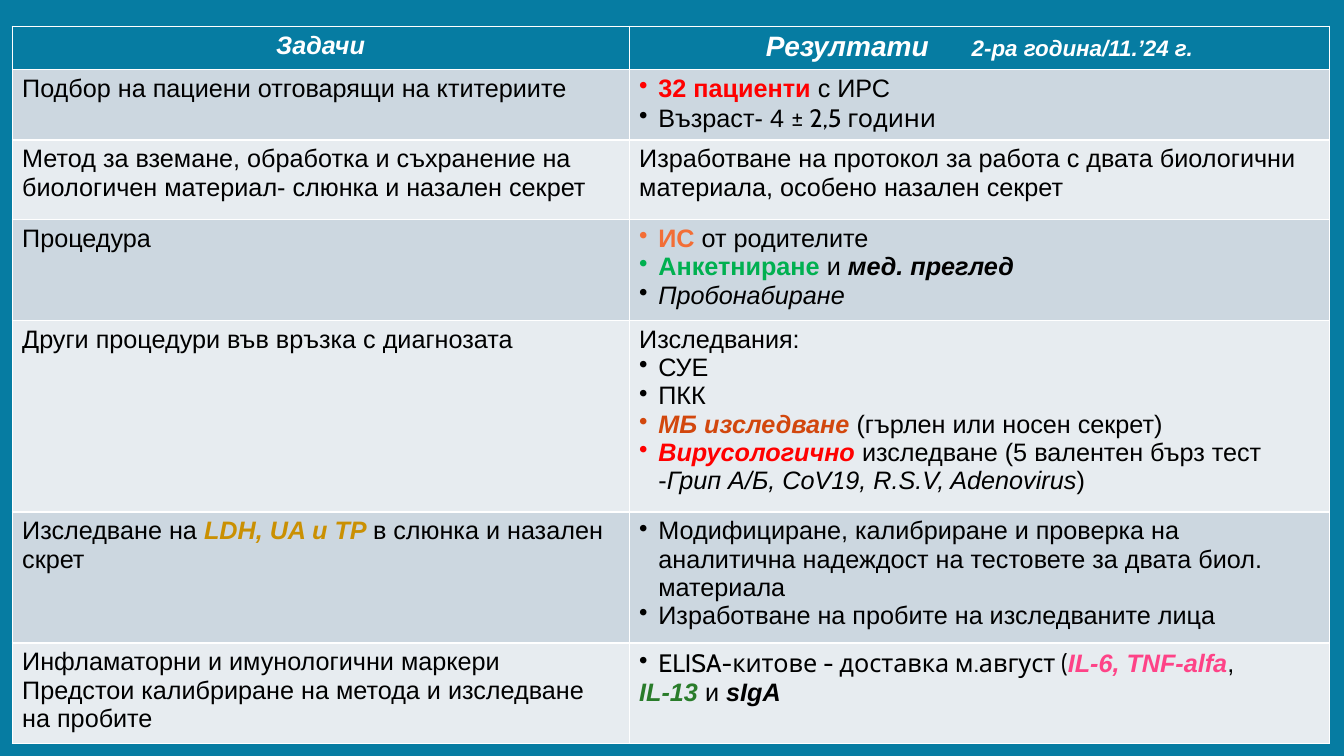
from pptx import Presentation
from pptx.dml.color import RGBColor
from pptx.enum.text import PP_ALIGN
from pptx.oxml.xmlchemy import OxmlElement
from pptx.util import Inches, Pt

CENTER = PP_ALIGN.CENTER
WIDTH, HEIGHT = Inches(13.33), Inches(7.5)
BLANK_LAYOUT = 6
TEAL, WHITE, BLACK, RED = "067CA2", "FFFFFF", "000000", "FF0000"
BANDS = ("E7ECF0", "CCD7E0")
INDENT = Inches(0.19)
COLUMNS = (6.12, 6.95)
ROWS = (0.43, 0.7, 0.79, 1.0, 1.9, 1.3, 1.0)


def color(code):
    return RGBColor.from_string(code)


def span(text, code=None, bold=None, italic=None, face=None):
    return text, code, bold, italic, face


def strong(text, code=None):
    return span(text, code, bold=True)


def accent(text, code=None):
    return span(text, code, bold=True, italic=True)


def slanted(text):
    return span(text, italic=True)


def cabin(text):
    return span(text, face="Cabin")


def plain(*spans):
    return "plain", spans


def bullet(*spans):
    return "bullet", spans


def hanging(*spans):
    return "hanging", spans


TASKS = (
    (
        [plain("Подбор на пациени отговарящи на ктитериите")],
        [bullet(strong("32 пациенти ", RED), "с ИРС"),
         bullet("Възраст- 4 ", cabin("± 2,5 години"))],
    ),
    (
        [plain("Метод за вземане, обработка и съхранение на "
               "биологичен материал- слюнка и назален секрет")],
        [plain("Изработване на протокол за работа с двата биологични "
               "материала, особено назален секрет")],
    ),
    (
        [plain("Процедура")],
        [bullet(strong("ИС ", "F36E36"), "от родителите"),
         bullet(strong("Анкетниране", "00B050"), " и ", accent("мед. преглед")),
         bullet(slanted("Пробонабиране"))],
    ),
    (
        [plain("Други процедури във връзка с диагнозата")],
        [plain("Изследвания:"),
         bullet("СУЕ"),
         bullet("ПКК"),
         bullet(accent("МБ изследване ", "D2470D"), "(гърлен или носен секрет)"),
         bullet(accent("Вирусологично ", RED), "изследване (5 валентен бърз тест -",
                slanted("Грип А/Б, CoV19, R.S.V, Adenovirus"), ")")],
    ),
    (
        [plain("Изследване на ", accent("LDH, UA и TP ", "CA9002"),
               "в слюнка и назален скрет")],
        [bullet("Модифициране, калибриране и проверка на аналитична "
                "надеждост на тестовете за двата биол. материала"),
         bullet("Изработване на пробите на изследваните лица")],
    ),
    (
        [plain("Инфламаторни и имунологични маркери"),
         plain("Предстои калибриране на метода и изследване на пробите")],
        [bullet(cabin("ELISA-китове - доставка м.август ("),
                accent("IL-6, TNF-alfa", "FE4387"), ","),
         hanging(accent("IL-13 ", "297C2A"), "и ", accent("sIgA"))],
    ),
)


def fill_cell(cell, code):
    cell.fill.solid()
    cell.fill.fore_color.rgb = color(code)


def set_font(para, code, emphasis):
    font = para.font
    font.name, font.size = "Arial", Pt(18)
    font.bold = font.italic = emphasis
    font.color.rgb = color(code)


def set_indent(para, kind):
    properties = para._p.get_or_add_pPr()
    properties.set("marL", str(INDENT))
    properties.set("indent", str(-INDENT))
    if kind == "bullet":
        mark = OxmlElement("a:buChar")
        mark.set("char", "•")
        properties.append(mark)


def add_span(para, text, code, bold, italic, face):
    run = para.add_run()
    run.text = text
    run.font.bold, run.font.italic, run.font.name = bold, italic, face
    if code:
        run.font.color.rgb = color(code)


def write_cell(cell, paragraphs):
    frame = cell.text_frame
    for index, (kind, spans) in enumerate(paragraphs):
        para = frame.add_paragraph() if index else frame.paragraphs[0]
        if kind != "plain":
            set_indent(para, kind)
        set_font(para, BLACK, False)
        for item in spans:
            add_span(para, *(span(item) if isinstance(item, str) else item))


def write_heading(cell, *parts):
    para = cell.text_frame.paragraphs[0]
    para.alignment = CENTER
    set_font(para, WHITE, True)
    for text, size, spacing in parts:
        run = para.add_run()
        run.text = text
        run.font.size = Pt(size)
        if spacing:
            run._r.get_or_add_rPr().set("spc", str(spacing * 100))
    fill_cell(cell, TEAL)


def add_task_table(page):
    frame = page.shapes.add_table(
        len(ROWS), len(COLUMNS), Inches(0.12), Inches(0.26),
        Inches(sum(COLUMNS)), Inches(sum(ROWS)))
    table = frame.table
    for column, width in zip(table.columns, COLUMNS):
        column.width = Inches(width)
    for row, height in zip(table.rows, ROWS):
        row.height = Inches(height)
    write_heading(table.cell(0, 0), ("Задачи", 18, 0))
    write_heading(table.cell(0, 1), ("Резултати ", 20, 0), (" ", 18, 20),
                  ("2-ра година/11.’24 г.", 16, 0))
    for row, task in enumerate(TASKS, 1):
        for column, paragraphs in enumerate(task):
            cell = table.cell(row, column)
            write_cell(cell, paragraphs)
            fill_cell(cell, BANDS[row % 2])


def main():
    deck = Presentation()
    deck.slide_width, deck.slide_height = WIDTH, HEIGHT
    page = deck.slides.add_slide(deck.slide_layouts[BLANK_LAYOUT])
    page.background.fill.solid()
    page.background.fill.fore_color.rgb = color(TEAL)
    add_task_table(page)
    deck.save("out.pptx")


if __name__ == "__main__":
    main()
